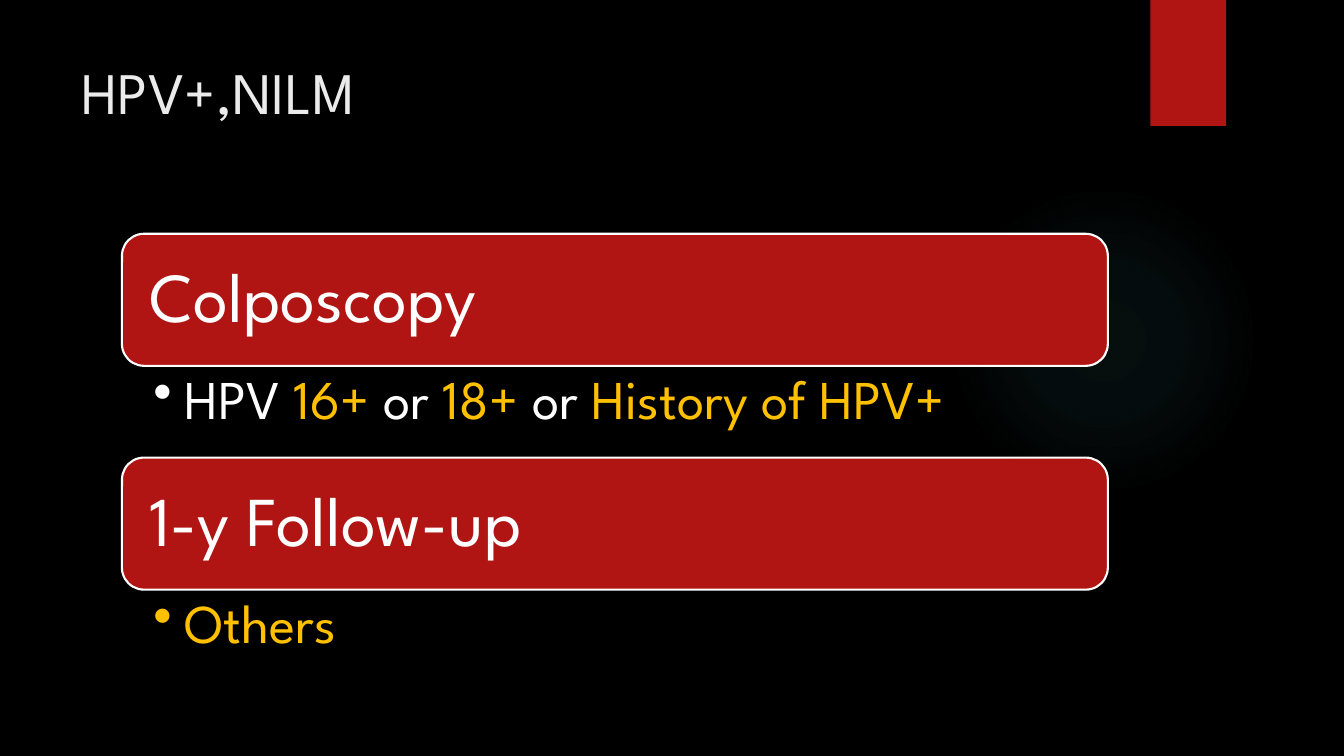
from lxml import etree
from pptx import Presentation
from pptx import util as u
from pptx.dml import color
from pptx.enum import shapes, text
from pptx.oxml import ns, parse_xml

FACE = "League Spartan"
RED, WHITE, GOLD, TEAL = "B01513", "FFFFFF", "FFC000", "50B9C1"
CARD_LEFT, CARD_WIDTH, CARD_HEIGHT = 87.1, 704.2, 94.3
FIRST_TOP, STEP = 167, 159.85


def rgb(value):
    return color.RGBColor.from_string(value)


def style(run, size, ink):
    run.font.name = FACE
    run.font.size = u.Pt(size)
    run.font.color.rgb = rgb(ink)


def set_insets(frame, left, top, right, bottom):
    frame.margin_left, frame.margin_top = u.Pt(left), u.Pt(top)
    frame.margin_right, frame.margin_bottom = u.Pt(right), u.Pt(bottom)
    frame.word_wrap = True


def add_block(slide, kind, left, top, width, height, fill=RED):
    block = slide.shapes.add_shape(kind, u.Pt(left), u.Pt(top), u.Pt(width), u.Pt(height))
    block.shadow.inherit = False
    block.fill.solid()
    block.fill.fore_color.rgb = rgb(fill)
    block.line.fill.background()
    return block


def add_glow(slide):
    glow = add_block(slide, shapes.MSO_SHAPE.OVAL, 677.5, 131.8, 221.8, 221.8, TEAL)
    stops = "".join(
        f'<a:gs pos="{place * 1000}"><a:srgbClr val="{TEAL}">'
        f'<a:alpha val="{alpha * 1000}"/></a:srgbClr></a:gs>'
        for place, alpha in ((0, 7), (36, 6), (69, 0))
    )
    gradient = parse_xml(
        f'<a:gradFill {ns.nsdecls("a")} rotWithShape="1"><a:gsLst>{stops}</a:gsLst>'
        '<a:path path="circle"><a:fillToRect l="50000" t="50000" r="50000" b="50000"/>'
        '</a:path></a:gradFill>'
    )
    solid = glow.element.spPr.find(ns.qn("a:solidFill"))
    solid.getparent().replace(solid, gradient)


def set_title(slide, wording):
    title = slide.shapes.title
    title.left, title.top = u.Pt(51.1), u.Pt(36)
    title.width, title.height = u.Pt(740.9), u.Pt(110.2)
    frame = title.text_frame
    frame.text = wording
    set_insets(frame, 7.2, 3.6, 7.2, 3.6)
    frame.vertical_anchor = text.MSO_ANCHOR.TOP
    frame.paragraphs[0].alignment = text.PP_ALIGN.LEFT
    style(frame.paragraphs[0].runs[0], 42, "EBEBEB")


def add_card(slide, top, wording):
    card = add_block(slide, shapes.MSO_SHAPE.ROUNDED_RECTANGLE,
                     CARD_LEFT, top, CARD_WIDTH, CARD_HEIGHT)
    card.line.color.rgb = rgb(WHITE)
    card.line.width = u.Pt(1.5)
    frame = card.text_frame
    frame.text = wording
    set_insets(frame, 15, 15, 15, 15)
    frame.vertical_anchor = text.MSO_ANCHOR.MIDDLE
    heading = frame.paragraphs[0]
    heading.alignment = text.PP_ALIGN.LEFT
    heading.line_spacing = 0.9
    style(heading.runs[0], 50, WHITE)


def add_criteria(slide, top, parts):
    box = slide.shapes.add_textbox(u.Pt(CARD_LEFT), u.Pt(top), u.Pt(CARD_WIDTH), u.Pt(65.5))
    frame = box.text_frame
    set_insets(frame, 22.4, 5, 28, 5)
    criteria = frame.paragraphs[0]
    criteria.line_spacing = 0.9
    properties = criteria._p.get_or_add_pPr()
    properties.set("marL", str(u.Pt(22.4)))
    properties.set("indent", str(-u.Pt(22.4)))
    etree.SubElement(properties, ns.qn("a:buChar")).set("char", "•")
    for wording, ink in parts:
        run = criteria.add_run()
        run.text = wording
        style(run, 39, ink)


def main():
    deck = Presentation()
    deck.slide_width, deck.slide_height = u.Pt(960), u.Pt(540)
    slide = deck.slides.add_slide(deck.slide_layouts[5])
    slide.background.fill.solid()
    slide.background.fill.fore_color.rgb = rgb("000000")
    add_glow(slide)
    add_block(slide, shapes.MSO_SHAPE.RECTANGLE, 821.8, 0, 54, 90)
    set_title(slide, "HPV+,NILM")

    pathways = (
        ("Colposcopy", (("HPV ", WHITE), ("16+ ", GOLD), ("or ", WHITE),
                        ("18+ ", GOLD), ("or ", WHITE), ("History of HPV+", GOLD))),
        ("1-y Follow-up", (("Others", GOLD),)),
    )
    for index, (action, criteria) in enumerate(pathways):
        top = FIRST_TOP + index * STEP
        add_card(slide, top, action)
        add_criteria(slide, top + CARD_HEIGHT, criteria)
    deck.save("out.pptx")


if __name__ == "__main__":
    main()
